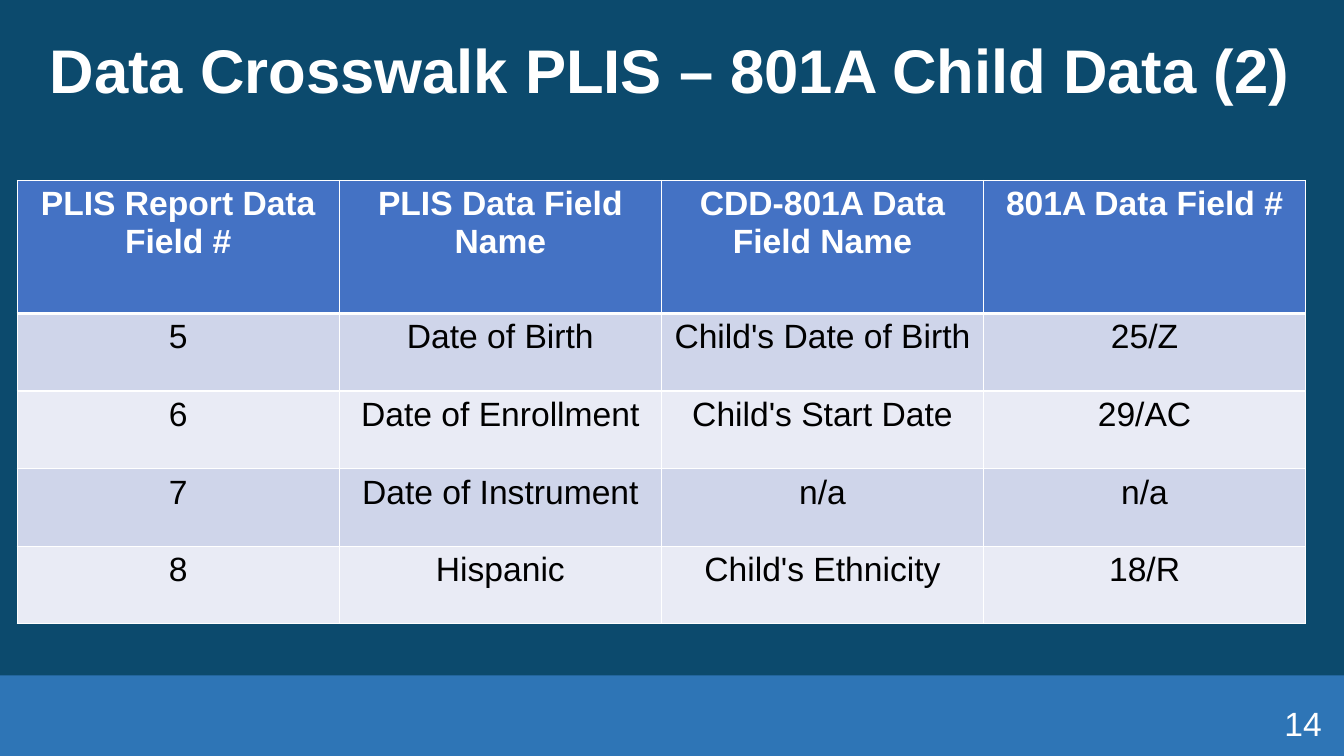
from dataclasses import dataclass

from lxml.etree import SubElement
from pptx import Presentation
from pptx.dml.color import RGBColor
from pptx.enum.shapes import MSO_SHAPE
from pptx.enum.text import MSO_ANCHOR, PP_ALIGN
from pptx.oxml.ns import qn
from pptx.util import Inches, Pt


@dataclass(frozen=True)
class Theme:
    font: str = "Arial"
    background: str = "0C4A6D"
    footer: str = "2E75B6"
    header: str = "4472C4"
    bands: tuple = ("CFD5EA", "E9EBF5")
    light: str = "FFFFFF"
    dark: str = "000000"
    title_size: int = 44
    body_size: int = 24
    border: int = 1
    header_rule: int = 3


HEADINGS = ("PLIS Report Data Field #", "PLIS Data Field Name",
            "CDD-801A Data Field Name", "801A Data Field #")
FIELDS = (
    ("5", "Date of Birth", "Child's Date of Birth", "25/Z"),
    ("6", "Date of Enrollment", "Child's Start Date", "29/AC"),
    ("7", "Date of Instrument", "n/a", "n/a"),
    ("8", "Hispanic", "Child's Ethnicity", "18/R"),
)


class SlideBuilder:
    def __init__(self, slide, theme):
        self.slide = slide
        self.theme = theme

    def background(self):
        self.fill(self.slide.background, self.theme.background)

    def fill(self, target, color):
        target.fill.solid()
        target.fill.fore_color.rgb = RGBColor.from_string(color)

    def set_text(self, text_frame, text, size, color, bold=False, align=PP_ALIGN.CENTER):
        text_frame.text = text
        paragraph = text_frame.paragraphs[0]
        paragraph.alignment = align
        font = paragraph.runs[0].font
        font.name = self.theme.font
        font.size = Pt(size)
        font.bold = bold
        font.color.rgb = RGBColor.from_string(color)
        return paragraph

    def rectangle(self, left, top, width, height, color):
        shape = self.slide.shapes.add_shape(
            MSO_SHAPE.RECTANGLE, Inches(left), Inches(top), Inches(width), Inches(height))
        shape.shadow.inherit = False
        self.fill(shape, color)
        shape.line.fill.background()

    def text_box(self, left, top, width, height, anchor):
        shape = self.slide.shapes.add_textbox(
            Inches(left), Inches(top), Inches(width), Inches(height))
        text_frame = shape.text_frame
        text_frame.word_wrap = True
        text_frame.vertical_anchor = anchor
        return text_frame

    def title(self, text):
        text_frame = self.text_box(0.15, 0, 13, 1.45, MSO_ANCHOR.MIDDLE)
        paragraph = self.set_text(
            text_frame, text, self.theme.title_size, self.theme.light, bold=True)
        paragraph.line_spacing = 0.9

    def page_number(self, text):
        text_frame = self.text_box(12.12, 6.92, 0.99, 0.45, MSO_ANCHOR.BOTTOM)
        text_frame.margin_left = text_frame.margin_right = 0
        text_frame.margin_top = text_frame.margin_bottom = 0
        self.set_text(text_frame, text, self.theme.body_size, self.theme.light,
                      align=PP_ALIGN.RIGHT)

    def cell_borders(self, cell, top, bottom):
        """Draw all four borders; top and bottom are widths in points."""
        properties = cell._tc.get_or_add_tcPr()
        widths = (("a:lnL", self.theme.border), ("a:lnR", self.theme.border),
                  ("a:lnT", top), ("a:lnB", bottom))
        for tag, width in widths:
            line = SubElement(properties, qn(tag), w=str(Pt(width)))
            solid = SubElement(line, qn("a:solidFill"))
            SubElement(solid, qn("a:srgbClr"), val=self.theme.light)

    def table(self, left, top, width, header_height, row_height, rows):
        theme = self.theme
        height = header_height + row_height * (len(rows) - 1)
        table = self.slide.shapes.add_table(
            len(rows), len(rows[0]), Inches(left), Inches(top),
            Inches(width), Inches(height)).table
        for row_index, values in enumerate(rows):
            is_header = row_index == 0
            table.rows[row_index].height = Inches(header_height if is_header else row_height)
            band = theme.header if is_header else theme.bands[(row_index - 1) % 2]
            color = theme.light if is_header else theme.dark
            top_rule = theme.header_rule if row_index == 1 else theme.border
            bottom_rule = theme.header_rule if is_header else theme.border
            for column_index, value in enumerate(values):
                cell = table.cell(row_index, column_index)
                self.set_text(cell.text_frame, value, theme.body_size, color, bold=is_header)
                self.cell_borders(cell, top_rule, bottom_rule)
                self.fill(cell, band)


def main():
    presentation = Presentation()
    presentation.slide_width = Inches(13.33)
    presentation.slide_height = Inches(7.5)
    theme = Theme()
    slide = presentation.slides.add_slide(presentation.slide_layouts[6])
    builder = SlideBuilder(slide, theme)
    builder.background()
    builder.rectangle(0, 6.7, 13.33, 0.8, theme.footer)
    builder.title("Data Crosswalk PLIS – 801A Child Data (2)")
    builder.table(0.17, 1.79, 12.78, 1.32, 0.77, (HEADINGS, *FIELDS))
    builder.page_number("14")
    presentation.save("out.pptx")


if __name__ == "__main__":
    main()
